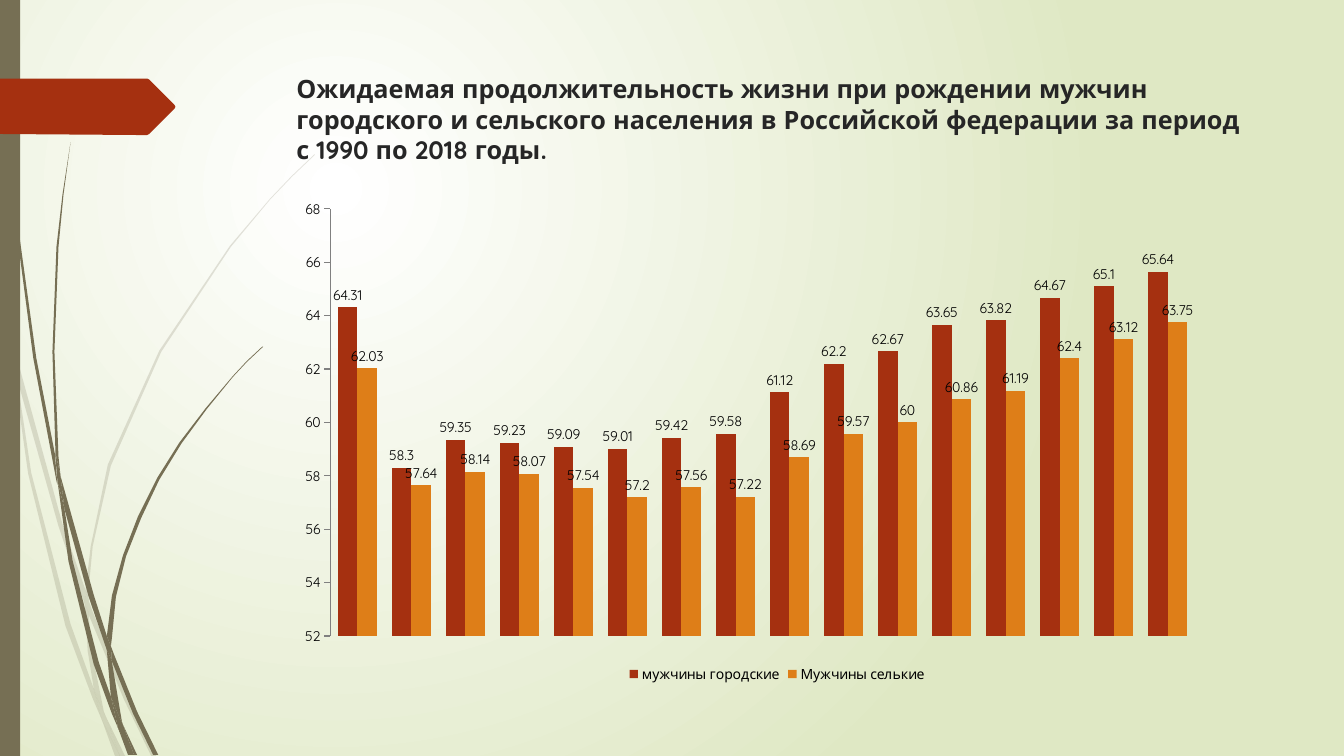
import dataclasses

import pptx
import pptx.chart.data
import pptx.dml.color
import pptx.enum.chart
import pptx.enum.shapes
import pptx.enum.text
import pptx.oxml
import pptx.oxml.ns
import pptx.util

PX = 9144


@dataclasses.dataclass(frozen=True)
class Theme:
    font: str = "Quicksand"
    title_size: int = 18
    chart_size: int = 10
    title: str = "262626"
    text: str = "000000"
    axis: str = "808080"
    glow: str = "FFFFFF"
    meadow: str = "DFE8C4"
    grass: str = "766F54"
    urban: str = "A53010"
    rural: str = "DE7E18"
    pale: int = 20


PALE_BLADES = [
    [(11, 350), (9, 322), (0, 282), (0, 299), (10, 344)],
    [(58, 522), (84, 599), (85, 586), (62, 520), (14, 345), (17, 376)],
    [(92, 607), (88, 596), (88, 610), (123, 694), (150, 750), (155, 750), (127, 692)],
    [(119, 750), (124, 750), (105, 711)],
    [(93, 683), (70, 619), (31, 469), (17, 376), (11, 350), (28, 470), (65, 621),
     (92, 693), (101, 714), (99, 707)],
    [(84, 599), (87, 646), (93, 683), (96, 692), (105, 711), (103, 706), (91, 646),
     (88, 610), (88, 608)],
    [(88, 584), (92, 542), (110, 462), (160, 349), (229, 245), (268, 198), (290, 175),
     (312, 154), (312, 153), (289, 175), (268, 197), (228, 244), (158, 348), (107, 461),
     (90, 542), (85, 584), (85, 586), (88, 596)],
    [(101, 714), (114, 750), (119, 750)],
    [(88, 608), (88, 610), (88, 596), (85, 586), (84, 599)],
    [(96, 692), (93, 683), (99, 707), (101, 714), (119, 750), (105, 711)],
]
DARK_BLADES = [
    [(7, 110), (17, 233), (33, 355), (56, 477), (57, 481), (55, 457), (55, 453),
     (36, 355), (19, 232), (8, 109), (5, 48), (4, 0), (3, 0), (4, 48)],
    [(88, 592), (106, 645), (106, 633), (106, 631), (93, 590), (60, 472), (64, 505)],
    [(113, 649), (110, 641), (111, 656), (132, 708), (152, 749), (157, 749), (136, 706)],
    [(110, 691), (98, 657), (72, 556), (64, 505), (57, 477), (68, 557), (93, 659),
     (111, 708), (117, 722), (116, 717)],
    [(60, 472), (58, 453), (54, 349), (58, 245), (63, 193), (70, 141), (62, 193),
     (56, 245), (52, 349), (55, 449)],
    [(133, 749), (136, 749), (122, 719)],
    [(57, 477), (64, 505), (60, 472), (55, 449), (55, 453)],
    [(111, 633), (115, 592), (125, 552), (140, 514), (158, 476), (180, 440), (205, 406),
     (231, 374), (245, 359), (261, 344), (260, 344), (245, 358), (231, 373), (204, 405),
     (178, 439), (156, 474), (137, 512), (122, 551), (111, 591), (106, 631), (110, 641)],
    [(117, 722), (127, 749), (131, 749)],
    [(106, 645), (110, 691), (116, 706), (122, 719), (121, 716), (111, 656), (109, 651)],
    [(106, 645), (109, 651), (111, 656), (110, 641), (106, 631), (106, 633)],
    [(116, 706), (110, 691), (116, 717), (117, 722), (130, 749), (133, 749), (122, 719)],
]
PENNANT = [(173, 108), (148, 133), (146, 134), (136, 134), (0, 133), (0, 78), (146, 78),
           (148, 79), (173, 104), (174, 106)]

URBAN = [64.31, 58.3, 59.35, 59.23, 59.09, 59.01, 59.42, 59.58, 61.12,
         62.2, 62.67, 63.65, 63.82, 64.67, 65.1, 65.64, None]
RURAL = [62.03, 57.64, 58.14, 58.07, 57.54, 57.2, 57.56, 57.22, 58.69,
         59.57, 60, 60.86, 61.19, 62.4, 63.12, 63.75, None]


def rgb(color):
    return pptx.dml.color.RGBColor.from_string(color)


class Deck:
    def __init__(self, theme):
        self.theme = theme
        self.prs = pptx.Presentation()
        self.prs.slide_width, self.prs.slide_height = 1333 * PX, 750 * PX
        self.s = self.prs.slides.add_slide(self.prs.slide_layouts[5])

    def background(self):
        fill = self.s.background.fill
        fill.gradient()
        for stop, color in zip(fill.gradient_stops, (self.theme.glow, self.theme.meadow)):
            stop.color.rgb = rgb(color)
        grad = self.s.element.find(".//" + pptx.oxml.ns.qn("a:gradFill"))
        grad.replace(grad.find(pptx.oxml.ns.qn("a:lin")), pptx.oxml.parse_xml(
            f'<a:path {pptx.oxml.ns.nsdecls("a")} path="circle">'
            '<a:fillToRect l="50000" t="50000" r="100000" b="100000"/></a:path>'))

    def paint(self, sp, color, opacity=100):
        sp.shadow.inherit = False
        sp.fill.solid()
        sp.fill.fore_color.rgb = rgb(color)
        sp.line.fill.background()
        if opacity < 100:
            clr = sp.element.spPr.find(".//" + pptx.oxml.ns.qn("a:srgbClr"))
            clr.append(pptx.oxml.parse_xml(
                f'<a:alpha {pptx.oxml.ns.nsdecls("a")} val="{opacity * 1000}"/>'))

    def outline(self, points, color, opacity=100, shapes=None):
        shapes = self.s.shapes if shapes is None else shapes
        builder = shapes.build_freeform(*points[0], scale=PX)
        builder.add_line_segments(points[1:], close=True)
        self.paint(builder.convert_to_shape(), color, opacity)

    def blades(self, outlines, opacity=100):
        group = self.s.shapes.add_group_shape()
        for points in outlines:
            self.outline(points, self.theme.grass, opacity, group.shapes)

    def rect(self, x, y, w, h, color):
        sp = self.s.shapes.add_shape(pptx.enum.shapes.MSO_SHAPE.RECTANGLE,
                                     x * PX, y * PX, w * PX, h * PX)
        self.paint(sp, color)

    def title(self, x, y, w, h, text):
        sp = self.s.shapes.title
        self.s.shapes.element.append(sp.element)
        sp.left, sp.top, sp.width, sp.height = x * PX, y * PX, w * PX, h * PX
        tf = sp.text_frame
        tf.word_wrap = True
        tf.auto_size = pptx.enum.text.MSO_AUTO_SIZE.NONE
        tf.vertical_anchor = pptx.enum.text.MSO_ANCHOR.TOP
        tf.margin_right = 18 * PX
        p = tf.paragraphs[0]
        p.alignment = pptx.enum.text.PP_ALIGN.LEFT
        r = p.add_run()
        r.text = text
        r.font.name = self.theme.font
        r.font.size = pptx.util.Pt(self.theme.title_size)
        r.font.bold = True
        r.font.color.rgb = rgb(self.theme.title)

    def columns(self, x, y, w, h, series):
        data = pptx.chart.data.CategoryChartData()
        data.categories = [str(n) for n in range(1, len(series[0][1]) + 1)]
        for name, values, _ in series:
            data.add_series(name, values)
        chart = self.s.shapes.add_chart(
            pptx.enum.chart.XL_CHART_TYPE.COLUMN_CLUSTERED,
            x * PX, y * PX, w * PX, h * PX, data).chart
        chart.has_title = False
        chart.font.name = self.theme.font
        chart.font.size = pptx.util.Pt(self.theme.chart_size)
        chart.font.color.rgb = rgb(self.theme.text)
        chart.has_legend = True
        chart.legend.position = pptx.enum.chart.XL_LEGEND_POSITION.BOTTOM
        chart.legend.include_in_layout = False
        chart.category_axis.visible = False
        axis = chart.value_axis
        axis.minimum_scale, axis.maximum_scale, axis.major_unit = 52, 68, 2
        axis.has_major_gridlines = False
        axis.major_tick_mark = pptx.enum.chart.XL_TICK_MARK.OUTSIDE
        axis.format.line.color.rgb = rgb(self.theme.axis)
        plot = chart.plots[0]
        plot.gap_width, plot.overlap = 75, 0
        plot.vary_by_categories = False
        for bars, (_, _, color) in zip(plot.series, series):
            bars.format.fill.solid()
            bars.format.fill.fore_color.rgb = rgb(color)
            bars.data_labels.show_value = True
            bars.data_labels.position = pptx.enum.chart.XL_LABEL_POSITION.OUTSIDE_END


def main():
    theme = Theme()
    deck = Deck(theme)
    deck.background()
    deck.blades(PALE_BLADES, theme.pale)
    deck.blades(DARK_BLADES)
    deck.rect(0, 0, 20, 750, theme.grass)
    deck.outline(PENNANT, theme.urban)
    deck.title(284, 68, 975, 140,
               "Ожидаемая продолжительность жизни при рождении мужчин городского и сельского "
               "населения в Российской федерации за период с 1990 по 2018 годы.")
    deck.columns(283, 189, 975, 492, [("мужчины городские", URBAN, theme.urban),
                                      ("Мужчины селькие", RURAL, theme.rural)])
    deck.prs.save("out.pptx")


if __name__ == "__main__":
    main()
